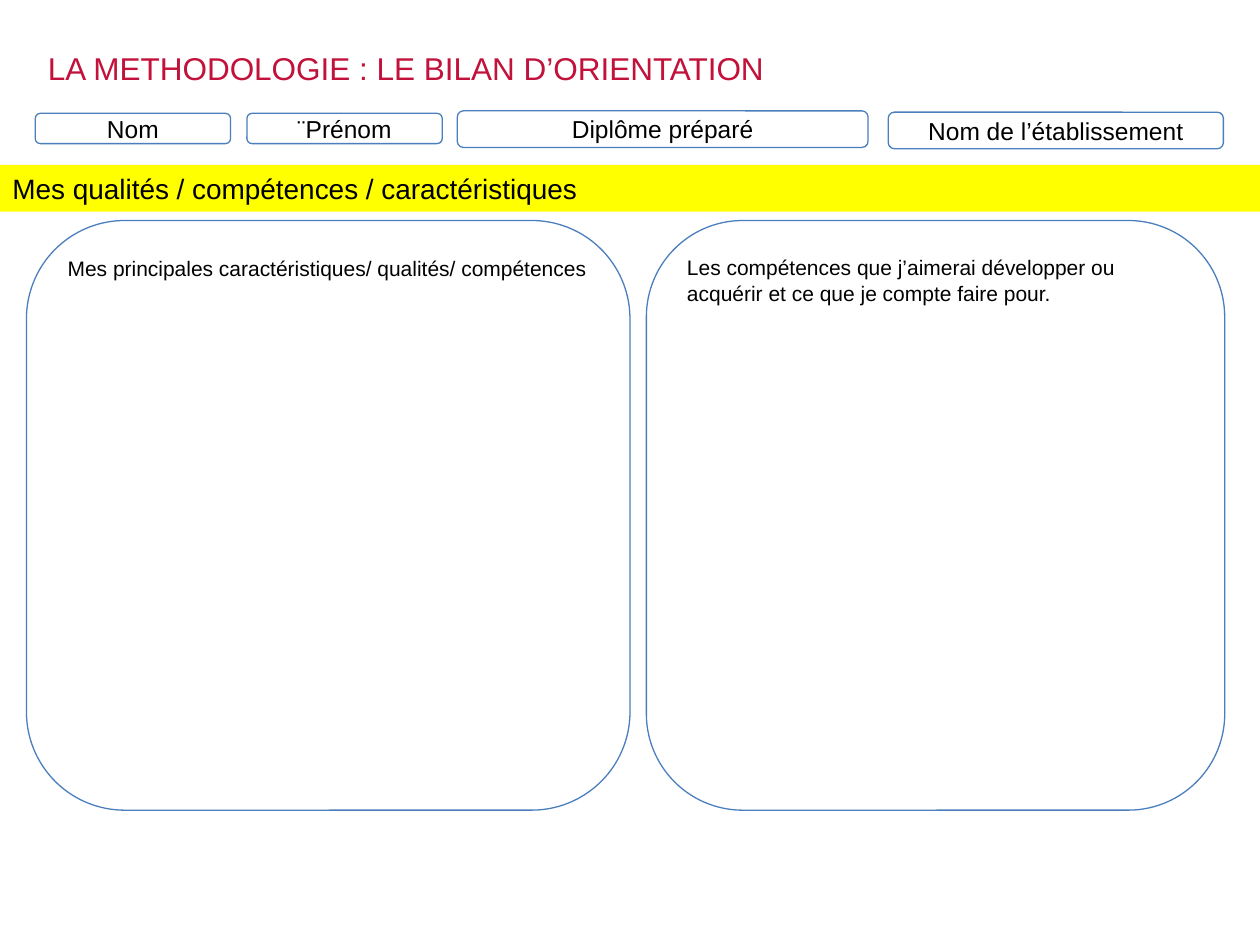
from pptx import Presentation
from pptx.dml.color import RGBColor
from pptx.enum.shapes import MSO_SHAPE
from pptx.enum.text import MSO_ANCHOR, PP_ALIGN
from pptx.util import Inches, Pt

ROUNDED, RECTANGLE = MSO_SHAPE.ROUNDED_RECTANGLE, MSO_SHAPE.RECTANGLE
TOP, MIDDLE = MSO_ANCHOR.TOP, MSO_ANCHOR.MIDDLE
LEFT, CENTER = PP_ALIGN.LEFT, PP_ALIGN.CENTER
RED, BLUE, YELLOW, BLACK = "C2113A", "4B7EBC", "FFFF00", "000000"


def color(hex_value):
    """Return the colour for a hex string."""
    return RGBColor.from_string(hex_value)


def write(holder, wording, size, hex_value=BLACK, anchor=TOP, align=LEFT):
    """Write one formatted paragraph in a shape or placeholder."""
    frame = holder.text_frame
    frame.text = wording
    frame.word_wrap = True
    frame.vertical_anchor = anchor
    paragraph = frame.paragraphs[0]
    paragraph.alignment = align
    font_format = {"name": "Arial", "size": Pt(size), "bold": False}
    for attribute, value in font_format.items():
        setattr(paragraph.font, attribute, value)
    paragraph.font.color.rgb = color(hex_value)


def add_title(slide, box):
    """Place the slide title in the title placeholder."""
    title = slide.shapes.title
    for attribute, value in zip(("left", "top", "width", "height"), box):
        setattr(title, attribute, Inches(value))
    write(title, "LA METHODOLOGIE : LE BILAN D’ORIENTATION", 18, RED)


def add_outlined_box(slide, box, wording, size, anchor=TOP, align=LEFT):
    """Draw a rounded blue outline with its wording."""
    outline = slide.shapes.add_shape(ROUNDED, *map(Inches, box))
    outline.shadow.inherit = False
    outline.fill.background()
    outline.line.color.rgb = color(BLUE)
    outline.line.width = Pt(0.75)
    write(outline, wording, size, anchor=anchor, align=align)


def add_identity_fields(slide, fields):
    """Draw the row of identity fields."""
    for label, box in fields:
        add_outlined_box(slide, box, label, 14, MIDDLE, CENTER)


def add_section_band(slide, box):
    """Draw the yellow section heading."""
    band = slide.shapes.add_shape(RECTANGLE, *map(Inches, box))
    band.shadow.inherit = False
    band.fill.solid()
    band.fill.fore_color.rgb = color(YELLOW)
    band.line.fill.background()
    write(band, "Mes qualités / compétences / caractéristiques", 16, anchor=MIDDLE)


def add_answer_panels(slide, panels):
    """Draw the large panels to be filled in."""
    for prompt, box in panels:
        add_outlined_box(slide, box, prompt, 12)


def main():
    """Build and save the orientation review slide."""
    presentation = Presentation()
    presentation.slide_width = Inches(10)
    presentation.slide_height = Inches(7.5)
    slide = presentation.slides.add_slide(presentation.slide_layouts[5])
    add_title(slide, (0.28, 0.34, 8.03, 0.71))
    add_identity_fields(slide, [
        ("Nom", (0.28, 0.9, 1.55, 0.24)),
        ("¨Prénom", (1.96, 0.9, 1.55, 0.24)),
        ("Diplôme préparé", (3.63, 0.88, 3.26, 0.29)),
        ("Nom de l’établissement", (7.05, 0.89, 2.66, 0.29)),
    ])
    add_answer_panels(slide, [
        ("Les compétences que j’aimerai développer ou acquérir "
         "et ce que je compte faire pour.", (5.13, 1.75, 4.59, 4.68)),
        ("Mes principales caractéristiques/ qualités/ compétences",
         (0.21, 1.75, 4.79, 4.68)),
    ])
    add_section_band(slide, (0, 1.31, 10, 0.37))
    presentation.save("out.pptx")


if __name__ == "__main__":
    main()
